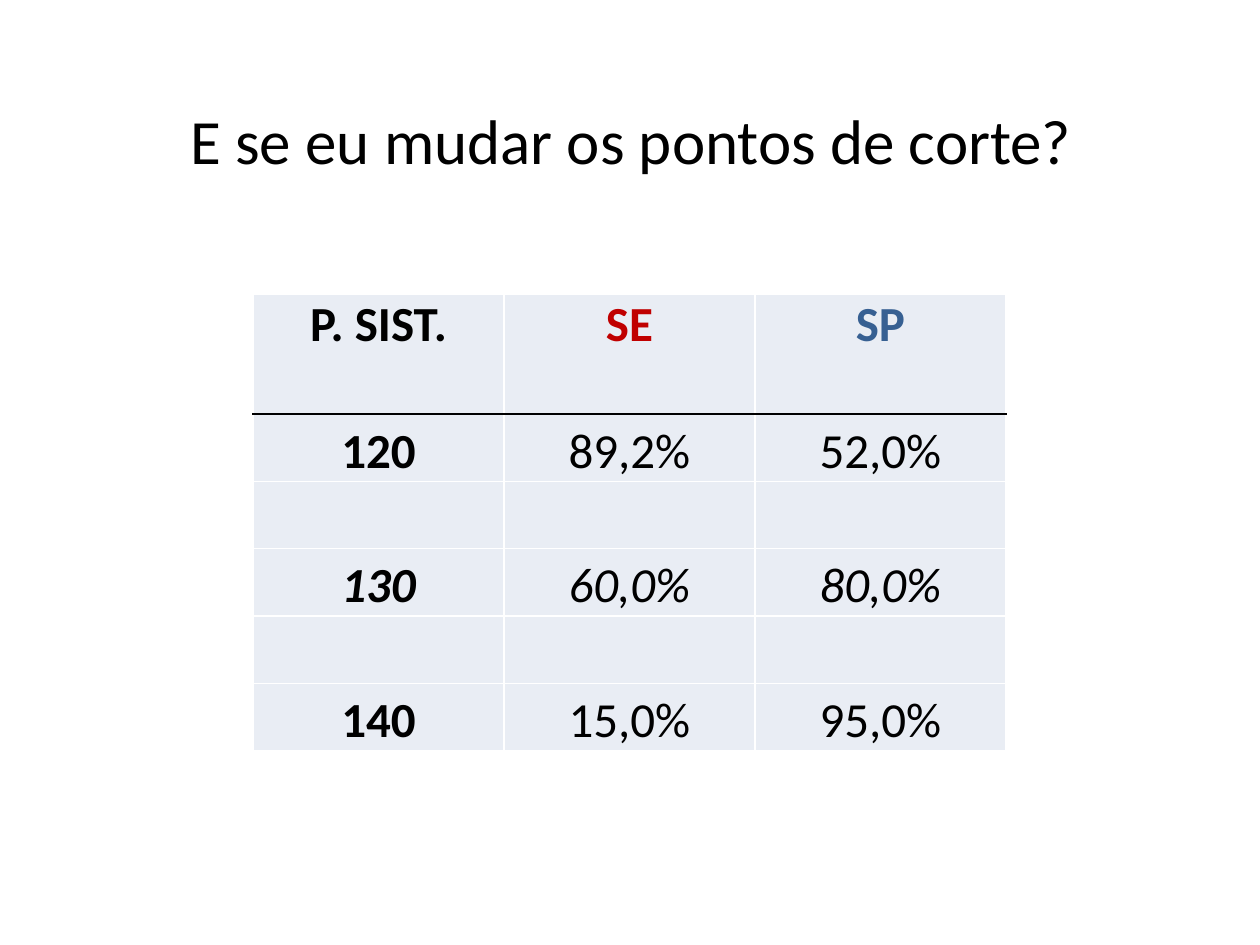
from lxml.etree import SubElement
from pptx import Presentation
from pptx.dml.color import RGBColor
from pptx.enum.text import MSO_ANCHOR as Anchor, PP_ALIGN as Align
from pptx.oxml.ns import qn
from pptx.util import Pt

PX = 914400 // 126
FONT = "Calibri"
BLACK = RGBColor(0x00, 0x00, 0x00)
WHITE = RGBColor(0xFF, 0xFF, 0xFF)
RED = RGBColor(0xC0, 0x00, 0x00)
BLUE = RGBColor(0x37, 0x60, 0x92)
PALE = RGBColor(0xE9, 0xED, 0xF4)

HEADER_COLORS = (BLACK, RED, BLUE)
CUTOFFS = (
    ("P. SIST.", "SE", "SP"),
    ("120", "89,2%", "52,0%"),
    ("", "", ""),
    ("130", "60,0%", "80,0%"),
    ("", "", ""),
    ("140", "15,0%", "95,0%"),
)
ITALIC_ROW = 3
COLUMN_WIDTH = 251
HEADER_HEIGHT = 120
BODY_HEIGHT = 337


def px(length):
    return length * PX


def write(frame, text, size, color=BLACK, bold=False, italic=False):
    paragraph = frame.paragraphs[0]
    paragraph.alignment = Align.CENTER
    run = paragraph.add_run()
    run.text = text
    font = run.font
    font.name, font.size = FONT, Pt(size)
    font.bold, font.italic = bold, italic
    font.color.rgb = color


def add_title(slide, text):
    title = slide.shapes.title
    title.left, title.top = px(64), px(96)
    title.width, title.height = px(1134), px(87)
    title.text_frame.vertical_anchor = Anchor.MIDDLE
    write(title.text_frame, text, 36)


def add_border(cell, side, color):
    line = SubElement(cell._tc.get_or_add_tcPr(), qn(f"a:ln{side}"), w=str(Pt(1)))
    fill = SubElement(line, qn("a:solidFill"))
    SubElement(fill, qn("a:srgbClr"), val=str(color))


def format_cell(cell, row):
    rule_side = {0: "B", 1: "T"}.get(row)
    for side in "LRTB":
        add_border(cell, side, BLACK if side == rule_side else WHITE)
    cell.fill.solid()
    cell.fill.fore_color.rgb = PALE
    cell.margin_left = cell.margin_right = cell.margin_top = px(1)
    cell.margin_bottom = 0
    cell.vertical_anchor = Anchor.BOTTOM if row else Anchor.TOP


def add_cutoff_table(slide):
    row_count, column_count = len(CUTOFFS), len(HEADER_COLORS)
    table = slide.shapes.add_table(
        row_count, column_count, px(253), px(294),
        px(COLUMN_WIDTH * column_count), px(HEADER_HEIGHT + BODY_HEIGHT),
    ).table
    table.first_row = table.horz_banding = False
    for column in table.columns:
        column.width = px(COLUMN_WIDTH)
    for r, values in enumerate(CUTOFFS):
        table.rows[r].height = px(BODY_HEIGHT) // (row_count - 1) if r else px(HEADER_HEIGHT)
        for c, value in enumerate(values):
            cell = table.cell(r, c)
            format_cell(cell, r)
            if value:
                write(cell.text_frame, value, 28,
                      color=BLACK if r else HEADER_COLORS[c],
                      bold=r == 0 or c == 0, italic=r == ITALIC_ROW)


def main():
    deck = Presentation()
    deck.slide_width, deck.slide_height = px(1260), px(945)
    slide = deck.slides.add_slide(deck.slide_layouts[5])
    add_title(slide, "E se eu mudar os pontos de corte?")
    add_cutoff_table(slide)
    deck.save("out.pptx")


if __name__ == "__main__":
    main()
